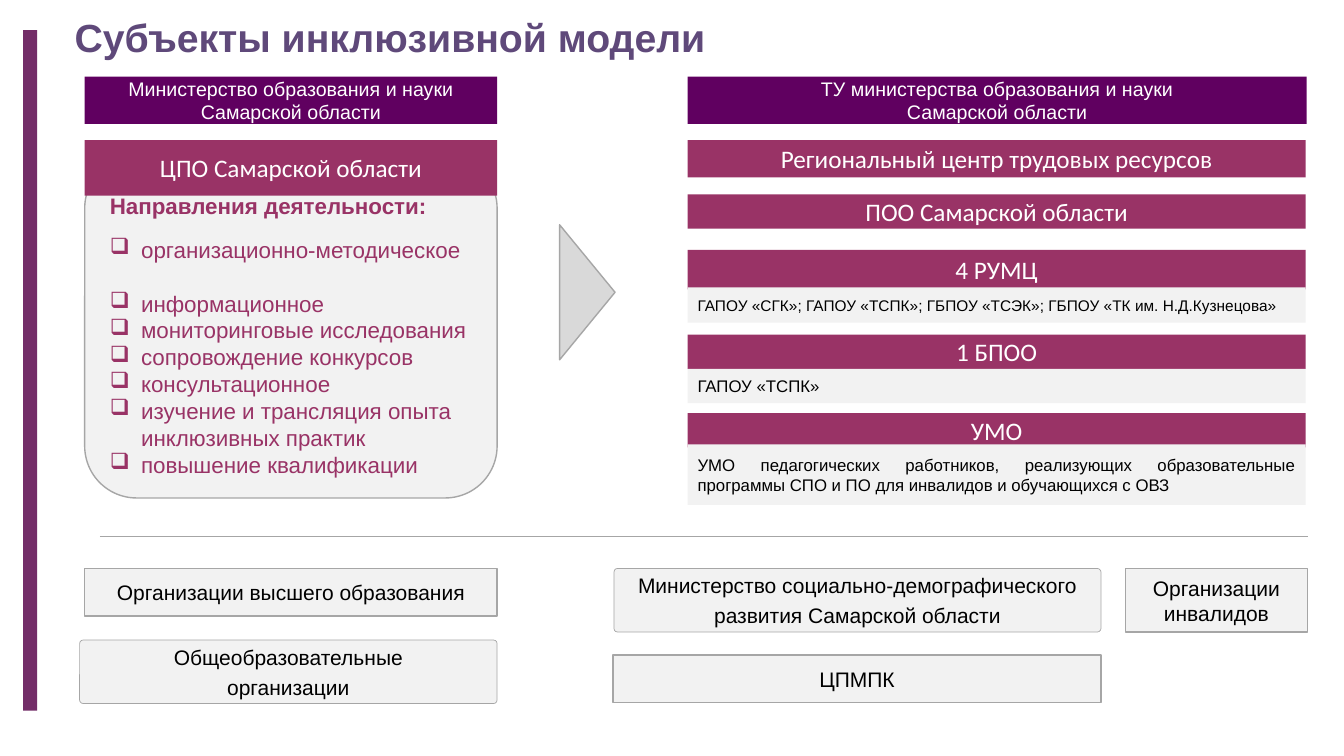
from lxml.etree import SubElement
from pptx import Presentation
from pptx.dml.color import RGBColor
from pptx.enum.shapes import MSO_CONNECTOR, MSO_SHAPE
from pptx.enum.text import MSO_ANCHOR, PP_ALIGN
from pptx.oxml.ns import qn
from pptx.util import Inches, Pt

COLORS = {
    "title": "5F497A",
    "bar": "732D68",
    "ministry": "600060",
    "heading": "993366",
    "panel": "F2F2F2",
    "arrow": "D9D9D9",
    "outline": "A6A6A6",
    "white": "FFFFFF",
    "black": "000000",
}
LEFT_X, LEFT_W = 0.84, 4.09
RIGHT_X, RIGHT_W = 6.82, 6.13

DIRECTIONS = [
    "организационно-методическое",
    "информационное",
    "мониторинговые исследования",
    "сопровождение конкурсов",
    "консультационное",
    "изучение и трансляция опыта инклюзивных практик",
    "повышение квалификации",
]
# top, height, text
HEADINGS = [
    (1.39, 0.37, "Региональный центр трудовых ресурсов"),
    (1.93, 0.34, "ПОО Самарской области"),
    (2.48, 0.39, "4 РУМЦ"),
    (3.32, 0.34, "1 БПОО"),
    (4.1, 0.34, "УМО"),
]
# top, height, size, alignment, text
DETAILS = [
    (2.85, 0.35, 11, PP_ALIGN.LEFT,
     "ГАПОУ «СГК»; ГАПОУ «ТСПК»; ГБПОУ «ТСЭК»; ГБПОУ «ТК им. Н.Д.Кузнецова»"),
    (3.66, 0.34, 12, PP_ALIGN.LEFT, "ГАПОУ «ТСПК»"),
    (4.41, 0.6, 12, PP_ALIGN.JUSTIFY,
     "УМО педагогических работников, реализующих образовательные "
     "программы СПО и ПО для инвалидов и обучающихся с ОВЗ"),
]
# left, top, width, height, text
PARTNERS = [
    (0.84, 5.64, 4.09, 0.47, "Организации высшего образования"),
    (6.08, 6.5, 4.84, 0.47, "ЦПМПК"),
    (11.16, 5.64, 1.81, 0.63, "Организации\nинвалидов"),
]
ROUNDED_PARTNERS = [
    (0.79, 6.35, 4.14, 0.63, "Общеобразовательные\nорганизации"),
    (6.09, 5.64, 4.83, 0.63,
     "Министерство социально-демографического\nразвития Самарской области"),
]


def rgb(name):
    return RGBColor.from_string(COLORS[name])


def add_box(s, x, y, w, h, fill, kind=MSO_SHAPE.RECTANGLE, adj=None, line=None):
    sp = s.shapes.add_shape(kind, Inches(x), Inches(y), Inches(w), Inches(h))
    sp.shadow.inherit = False
    sp.fill.solid()
    sp.fill.fore_color.rgb = rgb(fill)
    if line:
        sp.line.color.rgb = rgb("outline")
        sp.line.width = Pt(line)
    else:
        sp.line.fill.background()
    if adj is not None:
        sp.adjustments[0] = adj
    return sp


def add_bullet(p, indent=0.31, char="❑"):
    pPr = p._p.get_or_add_pPr()
    pPr.set("marL", str(Inches(indent)))
    pPr.set("indent", str(-Inches(indent)))
    SubElement(pPr, qn("a:buChar")).set("char", char)


def write(sp, text, size=18, font="Arial", color="black", bold=False,
          align=PP_ALIGN.CENTER, anchor=MSO_ANCHOR.MIDDLE, gap=0, wrap=True):
    """Fill a shape with one paragraph per line of text, gap points apart."""
    tf = sp.text_frame
    tf.word_wrap = wrap
    tf.vertical_anchor = anchor
    for i, line in enumerate(text.split("\n")):
        p = tf.add_paragraph() if i else tf.paragraphs[0]
        p.alignment = align
        if i and gap:
            p.space_before = Pt(gap)
        r = p.add_run()
        r.text = line
        r.font.size = Pt(size)
        r.font.name = font
        r.font.bold = bold
        r.font.color.rgb = rgb(color)
    return tf


def add_heading(s, x, y, w, h, text):
    write(add_box(s, x, y, w, h, "heading"), text, font="Calibri", color="white")


def add_title(s, text):
    sp = s.shapes.add_textbox(Inches(0.74), Inches(0.12), Inches(9.27), Inches(0.48))
    tf = write(sp, text, size=28, color="title", bold=True,
               align=PP_ALIGN.LEFT, anchor=MSO_ANCHOR.TOP)
    tf.margin_left = tf.margin_right = tf.margin_bottom = 0
    tf.margin_top = Inches(0.01)


def add_directions(s):
    sp = add_box(s, LEFT_X, 1.55, LEFT_W, 3.39, "panel",
                 MSO_SHAPE.ROUNDED_RECTANGLE, 0.152, line=1)
    text = "\n".join(["Направления деятельности:"] + DIRECTIONS)
    tf = write(sp, text, size=16, color="heading", align=PP_ALIGN.LEFT,
               anchor=MSO_ANCHOR.BOTTOM)
    title, first, *_ = tf.paragraphs
    title.runs[0].font.bold = True
    title.space_after = Pt(12)
    first.space_after = Pt(19)
    for p in tf.paragraphs[1:]:
        add_bullet(p)


def add_divider(s, x1, x2, y):
    c = s.shapes.add_connector(MSO_CONNECTOR.STRAIGHT, Inches(x1), Inches(y),
                               Inches(x2), Inches(y))
    c.line.color.rgb = rgb("outline")
    c.line.width = Pt(0.5)
    SubElement(c._element.spPr, qn("a:effectLst"))


def main():
    prs = Presentation()
    prs.slide_width, prs.slide_height = Inches(13.33), Inches(7.5)
    s = prs.slides.add_slide(prs.slide_layouts[6])

    add_directions(s)
    add_title(s, "Субъекты инклюзивной модели")
    add_box(s, 0.23, 0.3, 0.14, 6.75, "bar")

    for x, w, name in [(LEFT_X, LEFT_W, "Министерство"),
                       (RIGHT_X, 6.14, "ТУ министерства")]:
        write(add_box(s, x, 0.76, w, 0.47, "ministry"),
              f"{name} образования и науки\nСамарской области",
              size=14, color="white")

    add_heading(s, LEFT_X, 1.39, LEFT_W, 0.55, "ЦПО Самарской области")
    for y, h, text in HEADINGS:
        add_heading(s, RIGHT_X, y, RIGHT_W, h, text)
    add_box(s, 5.55, 2.23, 0.55, 1.34, "arrow", MSO_SHAPE.PENTAGON, 1, line=1)
    for y, h, size, align, text in DETAILS:
        write(add_box(s, RIGHT_X, y, RIGHT_W, h, "panel"), text,
              size=size, align=align)

    add_divider(s, 0.99, 12.97, 5.32)
    for *place, text in PARTNERS:
        write(add_box(s, *place, "panel", line=1), text, size=15)
    for *place, text in ROUNDED_PARTNERS:
        sp = add_box(s, *place, "panel", MSO_SHAPE.ROUNDED_RECTANGLE, 0.056, line=0.5)
        write(sp, text, size=15, gap=3.5, wrap=False)

    prs.save("out.pptx")


if __name__ == "__main__":
    main()
